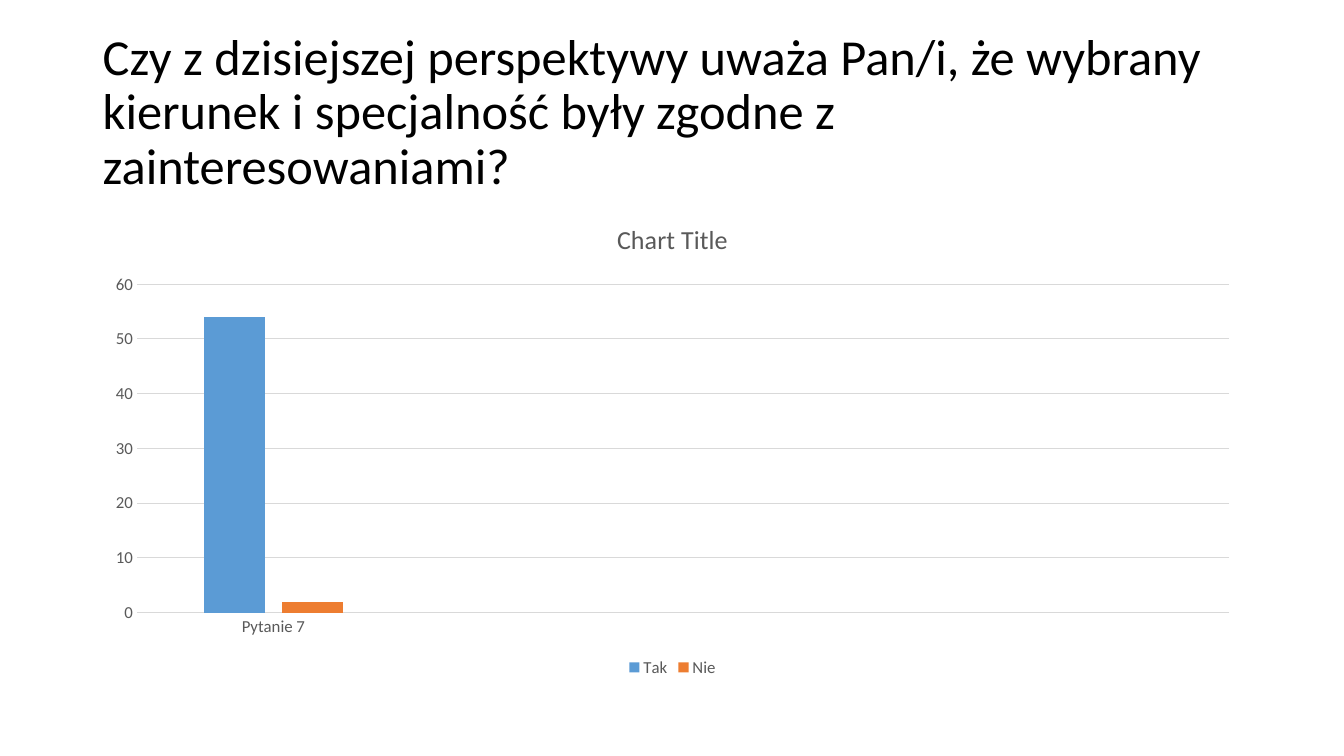
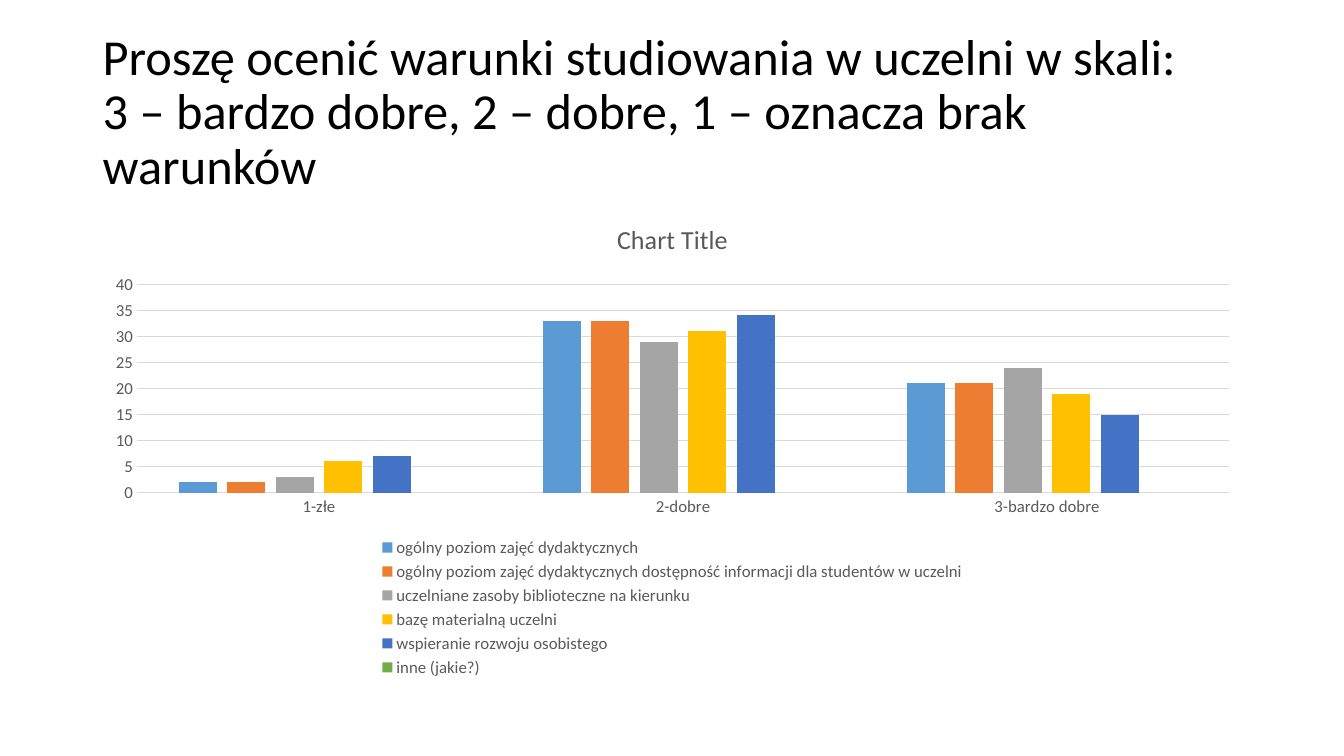
from pptx import Presentation
from pptx.chart.data import CategoryChartData
from pptx.dml.color import RGBColor
from pptx.enum.chart import XL_CHART_TYPE, XL_LEGEND_POSITION, XL_TICK_MARK
from pptx.enum.text import MSO_ANCHOR
from pptx.util import Inches, Pt

FACE = "Calibri"
BLACK = RGBColor(0x00, 0x00, 0x00)
GREY = RGBColor(0x59, 0x59, 0x59)
PALE = RGBColor(0xD9, 0xD9, 0xD9)
HUES = [
    RGBColor(0x5B, 0x9B, 0xD5),
    RGBColor(0xED, 0x7D, 0x31),
    RGBColor(0xA5, 0xA5, 0xA5),
    RGBColor(0xFF, 0xC0, 0x00),
    RGBColor(0x44, 0x72, 0xC4),
    RGBColor(0x70, 0xAD, 0x47),
]
HEAD = (0.92, 0.4, 11.5, 1.45)
BODY = (0.92, 2, 11.5, 4.76)

PAGES = [
    (
        "Czy z dzisiejszej perspektywy uważa Pan/i, że wybrany kierunek "
        "i specjalność były zgodne z zainteresowaniami?",
        ["Pytanie 7", "", "", ""],
        [("Tak", [54, None, None, None]), ("Nie", [2, None, None, None])],
    ),
    (
        "Proszę ocenić warunki studiowania w uczelni w skali:\v"
        "3 – bardzo dobre, 2 – dobre, 1 – oznacza brak warunków",
        ["1-złe", "2-dobre", "3-bardzo dobre"],
        [
            ("ogólny poziom zajęć dydaktycznych", [2, 33, 21]),
            ("ogólny poziom zajęć dydaktycznych dostępność informacji "
             "dla studentów w uczelni", [2, 33, 21]),
            ("uczelniane zasoby biblioteczne na kierunku", [3, 29, 24]),
            ("bazę materialną uczelni", [6, 31, 19]),
            ("wspieranie rozwoju osobistego", [7, 34, 15]),
            ("inne (jakie?)", [None, None, None]),
        ],
    ),
]


def set_font(font, size, color):
    """Give a font the shared face with a size and colour."""
    font.name = FACE
    font.size = Pt(size)
    font.bold = False
    font.color.rgb = color


def set_line(line):
    """Draw a line thin and pale."""
    line.color.rgb = PALE
    line.width = Pt(0.75)


def add_title(slide, box, text):
    """Place the slide title in its box."""
    frame = slide.shapes.add_textbox(*map(Inches, box)).text_frame
    frame.word_wrap = True
    frame.vertical_anchor = MSO_ANCHOR.MIDDLE
    frame.text = text
    para = frame.paragraphs[0]
    para.line_spacing = 0.9
    for run in para.runs:
        set_font(run.font, 36, BLACK)


def style_axes(chart):
    """Style both axes and the grid of a chart."""
    for axis in (chart.category_axis, chart.value_axis):
        axis.major_tick_mark = XL_TICK_MARK.NONE
        axis.minor_tick_mark = XL_TICK_MARK.NONE
        set_font(axis.tick_labels.font, 12, GREY)
    set_line(chart.category_axis.format.line)
    chart.value_axis.format.line.fill.background()
    set_line(chart.value_axis.major_gridlines.format.line)


def add_columns(slide, box, cats, rows):
    """Place a clustered column chart in its box."""
    data = CategoryChartData()
    data.categories = cats
    for name, vals in rows:
        data.add_series(name, vals)
    chart = slide.shapes.add_chart(
        XL_CHART_TYPE.COLUMN_CLUSTERED, *map(Inches, box), data
    ).chart
    set_font(chart.font, 10, BLACK)
    chart.has_title = True
    frame = chart.chart_title.text_frame
    frame.text = "Chart Title"
    set_font(frame.paragraphs[0].runs[0].font, 18.6, GREY)
    chart.chart_title.include_in_layout = False
    chart.has_legend = True
    chart.legend.position = XL_LEGEND_POSITION.BOTTOM
    chart.legend.include_in_layout = False
    set_font(chart.legend.font, 12, GREY)
    style_axes(chart)
    plot = chart.plots[0]
    plot.gap_width = 219
    plot.overlap = -27
    plot.vary_by_categories = False
    for series, hue in zip(plot.series, HUES):
        series.format.fill.solid()
        series.format.fill.fore_color.rgb = hue


def main():
    """Build and save the presentation."""
    deck = Presentation()
    deck.slide_width = Inches(13.33)
    deck.slide_height = Inches(7.5)
    for text, cats, rows in PAGES:
        slide = deck.slides.add_slide(deck.slide_layouts[6])
        add_title(slide, HEAD, text)
        add_columns(slide, BODY, cats, rows)
    deck.save("out.pptx")


if __name__ == "__main__":
    main()
